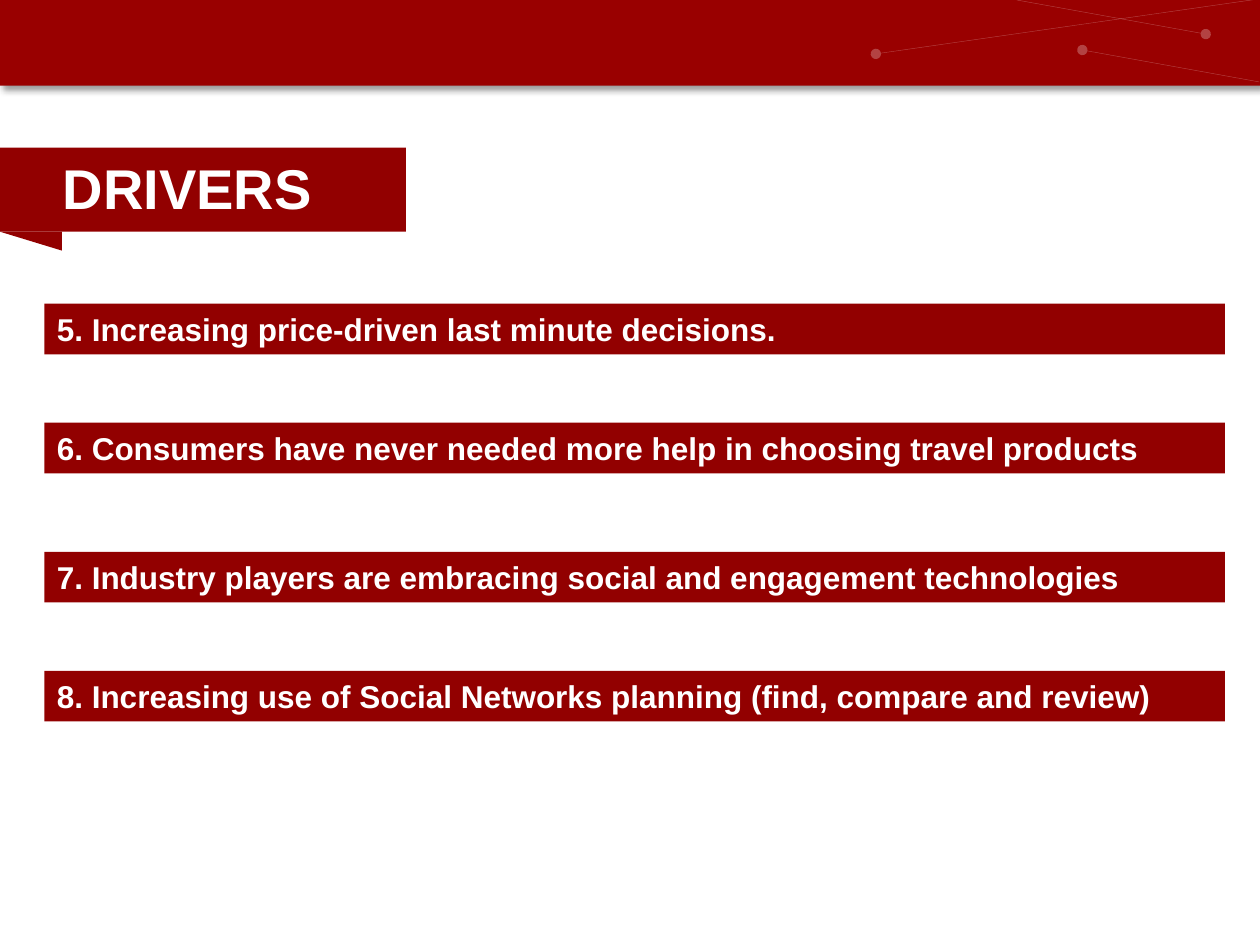
from lxml.etree import SubElement
from pptx import Presentation
from pptx.dml.color import RGBColor
from pptx.enum.shapes import MSO_CONNECTOR as Connector, MSO_SHAPE as Shape
from pptx.enum.text import MSO_ANCHOR as Anchor, MSO_AUTO_SIZE as AutoSize, PP_ALIGN as Align
from pptx.oxml.ns import qn
from pptx.util import Pt

COLORS = {"header": "990000", "ribbon": "920000", "light": "FFFFFF", "shadow": "000000"}
FONT = "Arial"
DRIVERS = [
    (173.5, "5. Increasing price-driven last minute decisions."),
    (241.5, "6. Consumers have never needed more help in choosing travel products"),
    (315.3, "7. Industry players are embracing social and engagement technologies"),
    (383.3, "8. Increasing use of Social Networks planning (find, compare and review)"),
]
NETWORK_LINES = [
    (581, 0, 689, 19.5),
    (718.5, -0.5, 500.5, 30.8),
    (719.5, 46.8, 618.5, 28.6),
]


def add_block(slide, kind, left, top, width, height, color):
    """Add a borderless, flat filled shape."""
    block = slide.shapes.add_shape(kind, Pt(left), Pt(top), Pt(width), Pt(height))
    block.fill.solid()
    block.fill.fore_color.rgb = RGBColor.from_string(COLORS[color])
    block.line.fill.background()
    block.shadow.inherit = False
    return block


def add_shadow(block):
    """Cast a soft shadow down and to the right."""
    effects = block.element.spPr.find(qn("a:effectLst"))
    shadow = SubElement(effects, qn("a:outerShdw"), blurRad=str(Pt(4)), dist=str(Pt(3)),
                        dir="2700000", algn="tl", rotWithShape="0")
    tint = SubElement(shadow, qn("a:srgbClr"), val=COLORS["shadow"])
    SubElement(tint, qn("a:alpha"), val="40000")


def add_network_line(slide, start_x, start_y, end_x, end_y):
    """Add a faint hairline that ends in a dot."""
    strand = slide.shapes.add_connector(
        Connector.STRAIGHT, Pt(start_x), Pt(start_y), Pt(end_x), Pt(end_y))
    strand.line.width = Pt(0.25)
    strand.line.color.rgb = RGBColor.from_string(COLORS["light"])
    properties = strand.element.spPr
    outline = properties.find(qn("a:ln"))
    SubElement(outline.find(".//" + qn("a:srgbClr")), qn("a:alpha"), val="26000")
    SubElement(outline, qn("a:tailEnd"), type="oval")
    SubElement(properties, qn("a:effectLst"))


def write(holder, text, size, anchor):
    """Write one bold, left-aligned line into a shape."""
    frame = holder.text_frame
    frame.word_wrap = True
    frame.auto_size = AutoSize.NONE
    frame.vertical_anchor = anchor
    paragraph = frame.paragraphs[0]
    paragraph.alignment = Align.LEFT
    run = paragraph.add_run()
    run.text = text
    run.font.name = FONT
    run.font.size = Pt(size)
    run.font.bold = True
    run.font.color.rgb = RGBColor.from_string(COLORS["light"])


def add_header(slide):
    """Add the top band with its network pattern."""
    add_shadow(add_block(slide, Shape.RECTANGLE, 0, 0, 720, 49, "header"))
    for ends in NETWORK_LINES:
        add_network_line(slide, *ends)


def add_title(slide, text):
    """Set the title on a ribbon with a folded corner."""
    ribbon = add_block(slide, Shape.RECTANGLE, 0, 84.4, 232, 48, "ribbon")
    title = slide.shapes.title
    title.left, title.top, title.width, title.height = Pt(28.6), Pt(84.4), Pt(211), Pt(46)
    write(title, text, 32, Anchor.TOP)
    ribbon.element.addnext(title.element)
    fold = add_block(slide, Shape.RIGHT_TRIANGLE, 0, 132.4, 35.4, 10.8, "ribbon")
    fold.rotation = 180


def add_driver(slide, top, text):
    """Add one driver as a full-width bar."""
    bar = add_block(slide, Shape.RECTANGLE, 25.4, top, 674.6, 29, "ribbon")
    write(bar, text, 18, Anchor.TOP)


def main():
    """Build and save the drivers slide."""
    deck = Presentation()
    deck.slide_width, deck.slide_height = Pt(720), Pt(540)
    slide = deck.slides.add_slide(deck.slide_layouts[5])
    add_header(slide)
    add_title(slide, "DRIVERS")
    for top, text in DRIVERS:
        add_driver(slide, top, text)
    deck.save("out.pptx")


if __name__ == "__main__":
    main()
